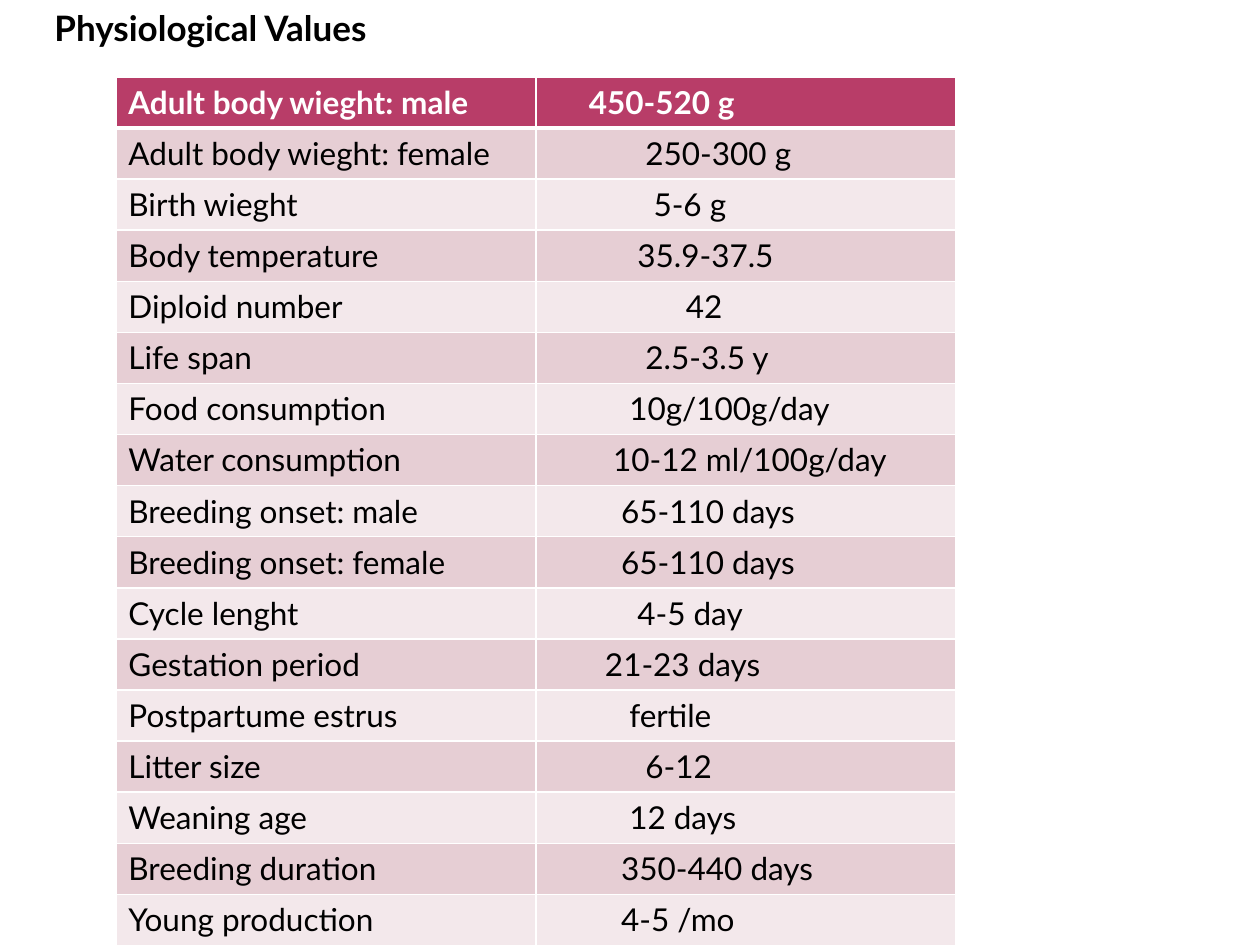
from lxml import etree
from pptx import Presentation
from pptx.dml.color import RGBColor
from pptx.enum.text import MSO_ANCHOR, MSO_AUTO_SIZE, PP_ALIGN
from pptx.oxml.ns import qn
from pptx.util import Cm, Pt

TOP = MSO_ANCHOR.TOP
FIXED = MSO_AUTO_SIZE.NONE
CENTER = PP_ALIGN.CENTER

BLACK = RGBColor(0, 0, 0)
WHITE = RGBColor(255, 255, 255)
ROSE = RGBColor(0xB8, 0x3D, 0x68)
PINK = RGBColor(0xE6, 0xCE, 0xD4)
PALE = RGBColor(0xF3, 0xE8, 0xEB)

STEP = 0.163  # one indent step, in cm
PAD = 0.25

# label, value, indent steps of the value
ROWS = [
    ("Adult body wieght: male", "450-520 g", 5),
    ("Adult body wieght: female", "250-300 g", 12),
    ("Birth wieght", "5-6 g", 13),
    ("Body temperature", "35.9-37.5", 11),
    ("Diploid number", "42", 17),
    ("Life span", "2.5-3.5 y", 12),
    ("Food consumption", "10g/100g/day", 10),
    ("Water consumption", "10-12 ml/100g/day", 8),
    ("Breeding onset: male", "65-110 days", 9),
    ("Breeding onset: female", "65-110 days", 9),
    ("Cycle lenght", "4-5 day", 11),
    ("Gestation period", "21-23 days", 7),
    ("Postpartume estrus", "fertile", 10),
    ("Litter size", "6-12", 12),
    ("Weaning age", "12 days", 10),
    ("Breeding duration", "350-440 days", 9),
    ("Young production", "4-5 /mo", 9),
]


class Deck:
    def __init__(self, font):
        self.font = font
        self.prs = Presentation()
        self.prs.slide_width = Cm(25.4)
        self.prs.slide_height = Cm(19.05)
        self.slide = self.prs.slides.add_slide(self.prs.slide_layouts[5])

    def style(self, para, size, color, bold):
        form = {"name": self.font, "size": Pt(size), "bold": bold}
        for run in para.runs:
            for key, val in form.items():
                setattr(run.font, key, val)
            run.font.color.rgb = color

    def title(self, text, left, top, width, height):
        shape = self.slide.shapes.title
        box = {"left": left, "top": top, "width": width, "height": height}
        for key, val in box.items():
            setattr(shape, key, Cm(val))
        frame = shape.text_frame
        frame.text = text
        form = {"vertical_anchor": TOP, "auto_size": FIXED, "word_wrap": True}
        for key, val in form.items():
            setattr(frame, key, val)
        para = frame.paragraphs[0]
        para.alignment = CENTER
        self.style(para, 20, BLACK, True)

    def edges(self, cell, widths):
        """Draw white borders; widths maps a side (L, R, T, B) to points."""
        props = cell._tc.get_or_add_tcPr()
        for side, width in widths.items():
            line = etree.SubElement(props, qn(f"a:ln{side}"), w=str(Pt(width)))
            fill = etree.SubElement(line, qn("a:solidFill"))
            etree.SubElement(fill, qn("a:srgbClr"), val=str(WHITE))

    def cell(self, cell, text, row, steps):
        head = row == 0
        cell.text = text
        cell.margin_left = Cm(PAD + steps * STEP)
        self.style(cell.text_frame.paragraphs[0], 18,
                   WHITE if head else BLACK, head)
        self.edges(cell, {"L": 1, "R": 1, "T": 3 if row == 1 else 1,
                          "B": 3 if head else 1})
        cell.fill.solid()
        cell.fill.fore_color.rgb = ROSE if head else PINK if row % 2 else PALE

    def table(self, rows, left, top, width, high):
        """Add a two-column table; high is the height of one row."""
        table = self.slide.shapes.add_table(
            len(rows), 2, Cm(left), Cm(top), Cm(width),
            Cm(high * len(rows))).table
        for num, (label, value, steps) in enumerate(rows):
            table.rows[num].height = Cm(high)
            self.cell(table.cell(num, 0), label, num, 0)
            self.cell(table.cell(num, 1), value, num, steps)


def main():
    deck = Deck("Lato")
    deck.title("Physiological Values", -6.55, 0, 21.59, 1.96)
    deck.table(ROWS, 2.34, 1.55, 16.93, 1.03)
    deck.prs.save("out.pptx")


if __name__ == "__main__":
    main()
